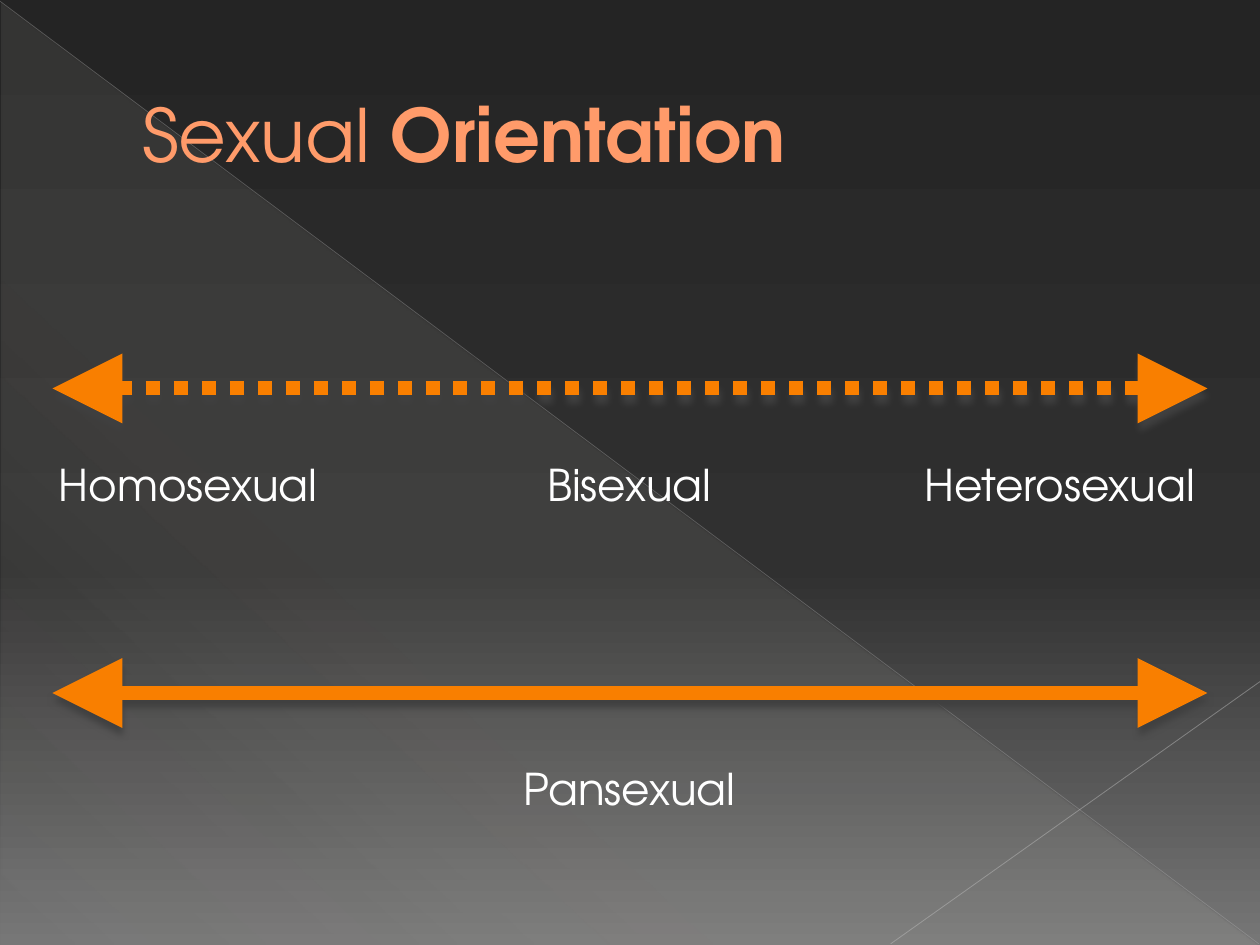
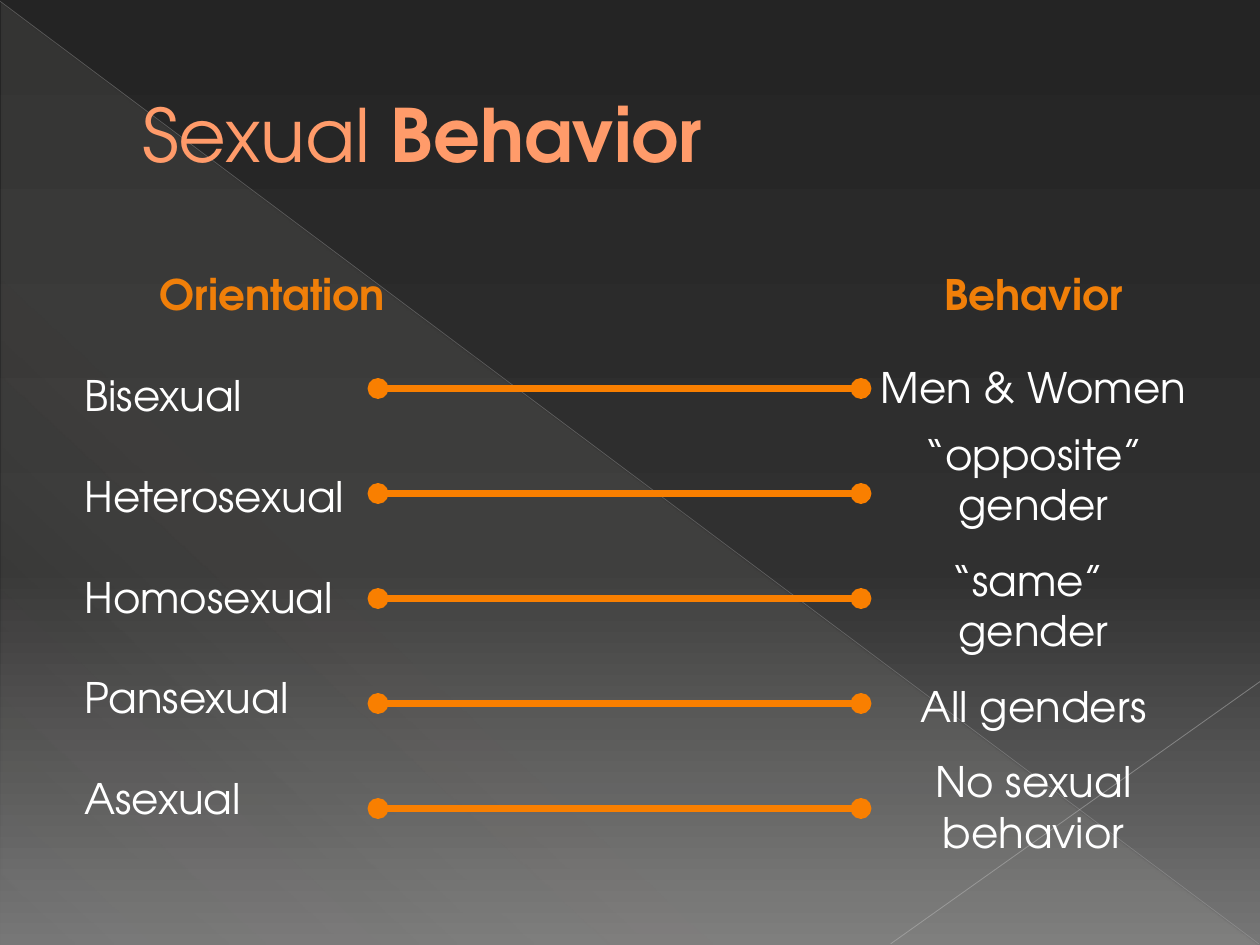
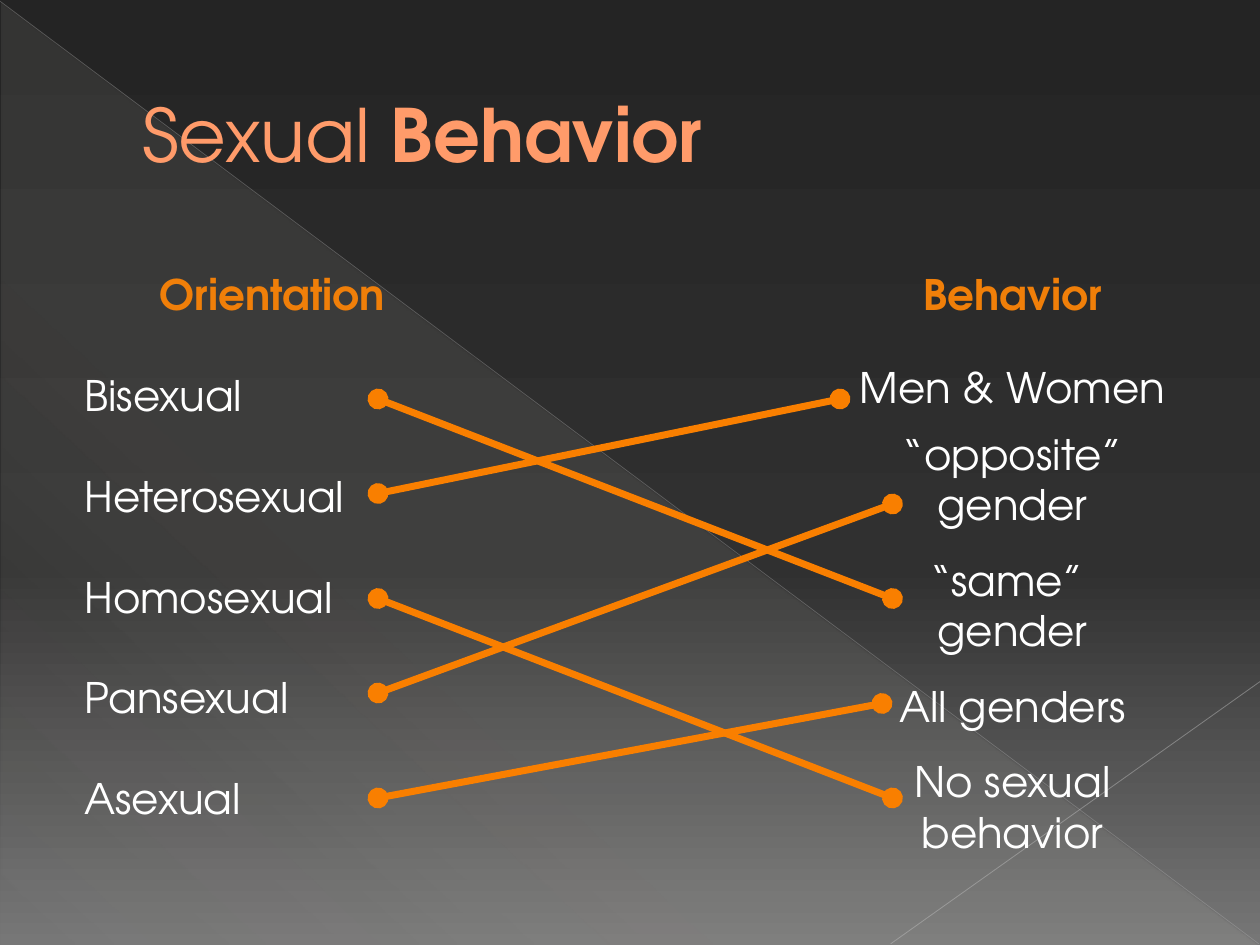
from dataclasses import dataclass

import pptx
import pptx.dml.color
import pptx.enum.dml
import pptx.enum.shapes
import pptx.enum.text
import pptx.oxml
import pptx.oxml.ns
import pptx.util
from lxml import etree

Pt = pptx.util.Pt
qn = pptx.oxml.ns.qn
Align = pptx.enum.text.PP_ALIGN
Dash = pptx.enum.dml.MSO_LINE


@dataclass(frozen=True)
class Theme:
    font: str = "TeX Gyre Adventor"
    title_color: str = "FF9B6A"
    heading_color: str = "F07F09"
    text_color: str = "FFFFFF"
    link_color: str = "F97F00"
    shadow_color: str = "404040"
    title_size: float = 42
    label_size: float = 25
    list_size: float = 24
    backdrop: tuple = ((0, "242424", 100), (60, "303030", 100), (100, "767676", 100))
    sheen: tuple = ((0, "E3DED1", 10), (70, "E3DED1", 8), (100, "E3DED1", 1))


@dataclass(frozen=True)
class Box:
    left: float
    top: float
    width: float
    height: float


@dataclass(frozen=True)
class Entry:
    text: str
    gap: float = 0


@dataclass(frozen=True)
class Stroke:
    color: str
    width: float
    opacity: int = 100
    dash: Dash = Dash.SOLID
    ends: str = ""
    end_size: str = "med"
    shadow: bool = False


@dataclass(frozen=True)
class Link:
    x1: float
    y1: float
    x2: float
    y2: float
    stroke: Stroke


THEME = Theme()
SPECTRUM = Stroke(THEME.link_color, 8, ends="triangle", end_size="lg", shadow=True)
DOTTED_SPECTRUM = Stroke(THEME.link_color, 8, dash=Dash.ROUND_DOT, ends="triangle",
                         end_size="lg", shadow=True)
MATCH = Stroke(THEME.link_color, 4, ends="oval")
CREASES = (
    Link(0, 0.7, 719.3, 539.3, Stroke("B6B6B6", 0.39, 35)),
    Link(720, 389.5, 509, 539.3, Stroke("BFBFBF", 0.47, 45)),
)
TITLE_BOX = Box(36, 21, 648, 110)
TITLE_INSET = 45.4
TEXT_INSET = 12.2
MATCH_LEFT = 216

ORIENTATIONS = tuple(
    Entry(name, 28.8)
    for name in ("Bisexual", "Heterosexual", "Homosexual", "Pansexual", "Asexual")
)
BEHAVIORS = (
    Entry("Men & Women", 24),
    Entry("“opposite”", 9.6),
    Entry("gender"),
    Entry("“same” ", 14.4),
    Entry("gender"),
    Entry("All genders", 14.4),
    Entry("No sexual", 14.4),
    Entry("behavior"),
)


def rgb(color: str) -> pptx.dml.color.RGBColor:
    return pptx.dml.color.RGBColor.from_string(color)


def set_opacity(color_element, opacity: int) -> None:
    if opacity < 100:
        etree.SubElement(color_element, qn("a:alpha"), val=str(opacity * 1000))


def paint_gradient(fill, owner, stops: tuple, angle: int) -> None:
    fill.gradient()
    gradient = owner.find(".//" + qn("a:gradFill"))
    stop_list = gradient.find(qn("a:gsLst"))
    for old_stop in list(stop_list):
        stop_list.remove(old_stop)
    for position, color, opacity in stops:
        stop = etree.SubElement(stop_list, qn("a:gs"), pos=str(position * 1000))
        set_opacity(etree.SubElement(stop, qn("a:srgbClr"), val=color), opacity)
    gradient.find(qn("a:lin")).set("ang", str(angle * 60000))


def draw_link(slide, link: Link) -> None:
    stroke = link.stroke
    connector = slide.shapes.add_connector(
        pptx.enum.shapes.MSO_CONNECTOR.STRAIGHT,
        Pt(link.x1), Pt(link.y1), Pt(link.x2), Pt(link.y2))
    line = connector.line
    line.width = Pt(stroke.width)
    line.color.rgb = rgb(stroke.color)
    line.dash_style = stroke.dash
    properties = connector.element.spPr
    outline = properties.find(qn("a:ln"))
    set_opacity(outline.find(".//" + qn("a:srgbClr")), stroke.opacity)
    if stroke.ends:
        for end in ("a:headEnd", "a:tailEnd"):
            etree.SubElement(outline, qn(end), type=stroke.ends,
                             w=stroke.end_size, len=stroke.end_size)
    effects = etree.SubElement(properties, qn("a:effectLst"))
    if stroke.shadow:
        shadow = etree.SubElement(effects, qn("a:outerShdw"), blurRad=str(Pt(4)),
                                  dist=str(Pt(4)), dir="5400000", rotWithShape="0")
        etree.SubElement(shadow, qn("a:srgbClr"), val=THEME.shadow_color)


def add_frame(slide, box: Box, inset: float):
    frame = slide.shapes.add_textbox(
        Pt(box.left), Pt(box.top), Pt(box.width), Pt(box.height)).text_frame
    frame.word_wrap = True
    frame.margin_left = Pt(inset)
    return frame


def style_paragraph(paragraph, size: float, color: str, align: Align,
                    bold: bool = False) -> None:
    paragraph.alignment = align
    paragraph.font.name = THEME.font
    paragraph.font.size = Pt(size)
    paragraph.font.color.rgb = rgb(color)
    paragraph.font.bold = bold


def draw_label(slide, text: str, left: float, top: float) -> None:
    label = add_frame(slide, Box(left, top, 186, 42), TEXT_INSET).paragraphs[0]
    label.text = text
    style_paragraph(label, THEME.label_size, THEME.text_color, Align.CENTER)


def draw_list(slide, box: Box, heading: str, entries: tuple, align: Align) -> None:
    frame = add_frame(slide, box, TEXT_INSET)
    header = frame.paragraphs[0]
    header.text = heading
    style_paragraph(header, THEME.list_size, THEME.heading_color, Align.CENTER, True)
    for entry in entries:
        item = frame.add_paragraph()
        item.text = entry.text
        item.space_before = Pt(entry.gap)
        style_paragraph(item, THEME.list_size, THEME.text_color, align)


def start_slide(deck, topic: str):
    slide = deck.slides.add_slide(deck.slide_layouts[6])
    sheen = slide.shapes.add_shape(
        pptx.enum.shapes.MSO_SHAPE.RIGHT_TRIANGLE,
        Pt(0.7), Pt(1.4), Pt(718.6), Pt(538.6))
    sheen.shadow.inherit = False
    sheen.line.fill.background()
    paint_gradient(sheen.fill, sheen.element, THEME.sheen, 133)
    for crease in CREASES:
        draw_link(slide, crease)
    frame = add_frame(slide, TITLE_BOX, TITLE_INSET)
    frame.vertical_anchor = pptx.enum.text.MSO_ANCHOR.MIDDLE
    title = frame.paragraphs[0]
    style_paragraph(title, THEME.title_size, THEME.title_color, Align.LEFT)
    title.add_run().text = "Sexual "
    subject = title.add_run()
    subject.text = topic
    subject.font.bold = True
    return slide


def build_orientation(deck) -> None:
    slide = start_slide(deck, "Orientation")
    draw_link(slide, Link(30, 222, 690, 222, DOTTED_SPECTRUM))
    for name, left in (("Homosexual", 12), ("Bisexual", 264), ("Heterosexual", 510)):
        draw_label(slide, name, left, 258)
    draw_link(slide, Link(30, 396, 690, 396, SPECTRUM))
    draw_label(slide, "Pansexual", 264, 432)


def build_behavior(deck, behavior_left: float, matches: tuple) -> None:
    slide = start_slide(deck, "Behavior")
    draw_list(slide, Box(36, 150, 234, 360), "Orientation", ORIENTATIONS, Align.LEFT)
    for start_y, end_x, end_y in matches:
        draw_link(slide, Link(MATCH_LEFT, start_y, end_x, end_y, MATCH))
    draw_list(slide, Box(behavior_left, 150, 228, 361.5), "Behavior", BEHAVIORS,
              Align.CENTER)


def main() -> None:
    deck = pptx.Presentation()
    deck.slide_width = Pt(720)
    deck.slide_height = Pt(540)
    master = deck.slide_master
    paint_gradient(master.background.fill, master.element, THEME.backdrop, 90)
    build_orientation(deck)
    build_behavior(deck, 474, tuple((y, 492, y) for y in range(222, 463, 60)))
    build_behavior(deck, 462, (
        (228, 510, 342),
        (282, 480, 228),
        (342, 510, 456),
        (396, 510, 288),
        (456, 504, 402),
    ))
    deck.save("out.pptx")


if __name__ == "__main__":
    main()
